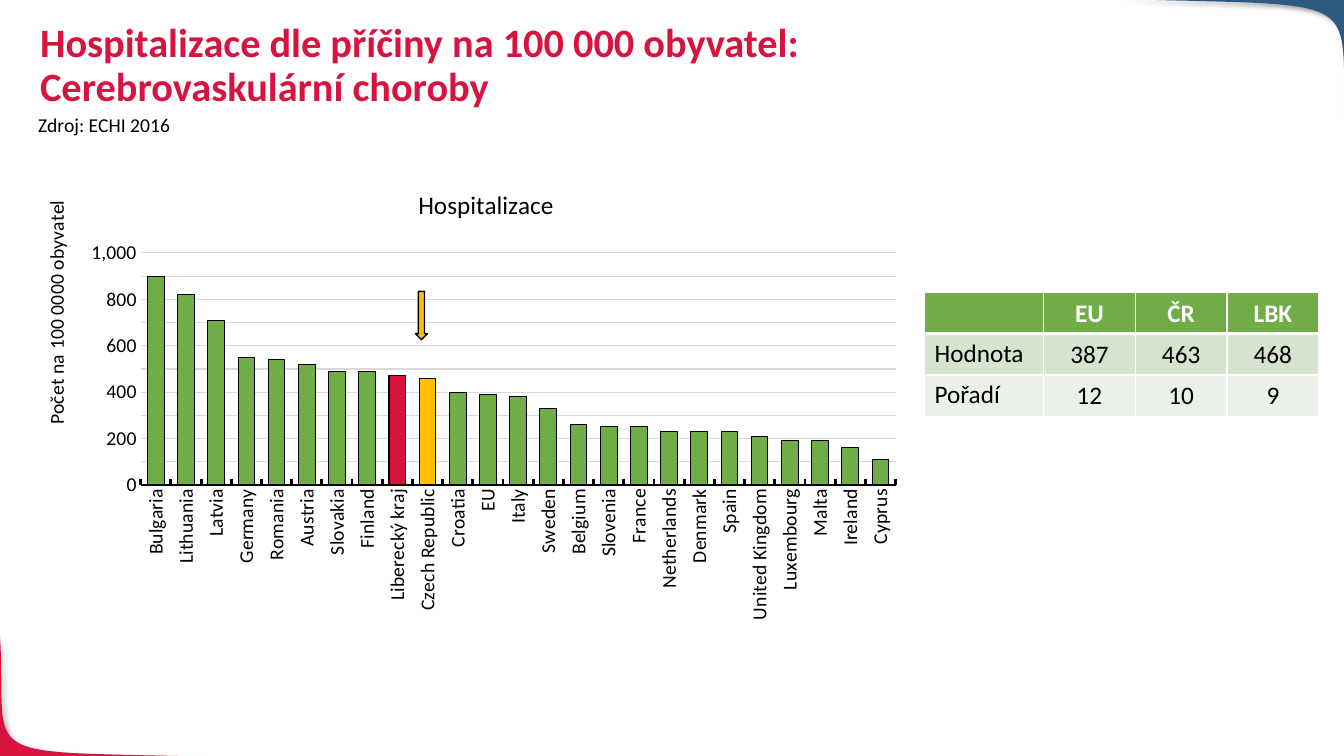
from copy import deepcopy
from lxml.etree import SubElement
from pptx import Presentation
from pptx.chart.data import CategoryChartData
from pptx.dml.color import RGBColor
from pptx.enum.chart import XL_CHART_TYPE, XL_TICK_MARK
from pptx.enum.shapes import MSO_SHAPE
from pptx.enum.text import MSO_ANCHOR, PP_ALIGN
from pptx.oxml import parse_xml
from pptx.oxml.ns import nsdecls, qn
from pptx.util import Inches, Pt

COLORS = {
    "red": "D71440", "blue": "2E5980", "green": "70AD47", "gold": "FFC000",
    "black": "000000", "white": "FFFFFF", "grid": "D9D9D9",
    "band": "D5E3CF", "pale": "EBF1E9",
}
RGB = {name: RGBColor.from_string(code) for name, code in COLORS.items()}


def style(font, size, color="black", bold=False):
    font.name, font.size, font.bold = "Calibri", Pt(size), bold
    font.color.rgb = RGB[color]


def place(node, index, **spots):
    """Give a chart part a fixed layout, in fractions of the chart."""
    for old in node.findall(qn("c:layout")):
        node.remove(old)
    target = '<c:layoutTarget val="inner"/>' if "w" in spots else ""
    modes = "".join(f'<c:{key}Mode val="edge"/>' for key in "xy")
    sizes = "".join(f'<c:{key} val="{val}"/>' for key, val in spots.items())
    node.insert(index, parse_xml(
        f'<c:layout {nsdecls("c")}><c:manualLayout>{target}{modes}{sizes}'
        '</c:manualLayout></c:layout>'))


deck = Presentation()
deck.slide_width, deck.slide_height = Inches(13.33), Inches(7.5)
slide = deck.slides.add_slide(deck.slide_layouts[6])
shapes = slide.shapes

# Curved corners: four Bezier points, then the page corner
corners = [
    ("red", [(2.13, 7.51), (-0.34, 7.44), (0.08, 7.59), (0, 6.3)], (-0.01, 7.51)),
    ("blue", [(11.11, -0.01), (13.7, 0.07), (13.26, -0.1), (13.35, 1.42)], (13.35, -0.01)),
]
STEPS = 40
for color, curve, tip in corners:
    points = []
    for step in range(STEPS + 1):
        t = step / STEPS
        parts = ((1 - t) ** 3, 3 * t * (1 - t) ** 2, 3 * t * t * (1 - t), t ** 3)
        points.append([Inches(sum(part * spot[axis] for part, spot in zip(parts, curve)))
                       for axis in (0, 1)])
    points.append([Inches(side) for side in tip])
    pen = shapes.build_freeform(*points[0])
    pen.add_line_segments(points[1:], close=True)
    corner = pen.convert_to_shape()
    corner.fill.solid()
    corner.fill.fore_color.rgb = RGB[color]
    corner.line.fill.background()
    corner.shadow.inherit = False
    glow = corner.element.spPr.find(qn("a:effectLst"))
    shade = SubElement(glow, qn("a:outerShdw"), blurRad=str(Pt(4)), dist=str(Pt(3)),
                       dir="2700000", algn="tl", rotWithShape="0")
    tint = SubElement(shade, qn("a:srgbClr"), val=COLORS["black"])
    SubElement(tint, qn("a:alpha"), val="40000")

# Heading and source
texts = [
    ("Zdroj: ECHI 2016", (0.28, 1.07, 1.52, 0.34), 14, "black", False),
    ("Hospitalizace dle příčiny na 100 000 obyvatel:\vCerebrovaskulární choroby",
     (0.3, 0.18, 11.43, 0.69), 28.8, "red", True),
]
for text, box, size, color, bold in texts:
    frame = shapes.add_textbox(*map(Inches, box)).text_frame
    frame.word_wrap = bold
    line = frame.paragraphs[0]
    line.text = text
    style(line.font, size, color, bold)
    if bold:
        line.line_spacing = 0.9

# Chart
rates = {
    "Bulgaria": 900, "Lithuania": 820, "Latvia": 710, "Germany": 550, "Romania": 540,
    "Austria": 520, "Slovakia": 490, "Finland": 490, "Liberecký kraj": 470,
    "Czech Republic": 460, "Croatia": 400, "EU": 390, "Italy": 380, "Sweden": 330,
    "Belgium": 260, "Slovenia": 250, "France": 250, "Netherlands": 230,
    "Denmark": 230, "Spain": 230, "United Kingdom": 210, "Luxembourg": 190,
    "Malta": 190, "Ireland": 160, "Cyprus": 110,
}
data = CategoryChartData()
data.categories = list(rates)
data.add_series("Hospitalizace", list(rates.values()))
chart = shapes.add_chart(XL_CHART_TYPE.COLUMN_CLUSTERED, Inches(0.21), Inches(1.68),
                         Inches(8.85), Inches(4.56), data).chart
style(chart.font, 10)
chart.has_legend = False

plot = chart.plots[0]
plot.gap_width, plot.overlap, plot.vary_by_categories = 81, -27, False
series = plot.series[0]
marks = {"Liberecký kraj": "red", "Czech Republic": "gold"}
looks = [(series.format, "green")]
looks += [(series.points[list(rates).index(name)].format, color)
          for name, color in marks.items()]
for look, color in looks:
    look.fill.solid()
    look.fill.fore_color.rgb = RGB[color]
    look.line.color.rgb = RGB["black"]
    look.line.width = Pt(0.75)

lands, scale = chart.category_axis, chart.value_axis
for axis in (lands, scale):
    style(axis.tick_labels.font, 14)
    axis.minor_tick_mark = XL_TICK_MARK.NONE
lands.major_tick_mark = XL_TICK_MARK.INSIDE
lands.format.line.color.rgb = RGB["black"]
lands.format.line.width = Pt(2)
lands._element.find(qn("c:txPr")).find(qn("a:bodyPr")).set("rot", "-5400000")

scale.major_tick_mark = XL_TICK_MARK.NONE
scale.format.line.fill.background()
scale.minimum_scale, scale.maximum_scale = 0, 1000
scale.major_unit, scale.minor_unit = 200, 100
scale.tick_labels.number_format = "#,##0"
scale.tick_labels.number_format_is_linked = False
scale.has_minor_gridlines = True
grid = scale.major_gridlines.format.line
grid.color.rgb = RGB["grid"]
grid.width = Pt(0.75)
major, minor = (scale._element.find(qn(f"c:{kind}Gridlines")) for kind in ("major", "minor"))
minor.append(deepcopy(major.find(qn("c:spPr"))))

titles = [
    (chart.chart_title, "Hospitalizace", 18, 0, 0.44, 0.03),
    (scale.axis_title, "Počet na 100 0000 obyvatel", 14, -5400000, 0.02, 0.06),
]
for title, text, size, turn, x, y in titles:
    line = title.text_frame.paragraphs[0]
    line.text = text
    style(line.font, size)
    title._element.find(".//" + qn("a:bodyPr")).set("rot", str(turn))
    place(title._element, 1, x=x, y=y)
place(lands._element.getparent(), 0, x=0.134, y=0.182, w=0.846, h=0.505)

# Arrow over the Czech bar
arrow = shapes.add_shape(MSO_SHAPE.DOWN_ARROW, Inches(4.12), Inches(2.89),
                         Inches(0.12), Inches(0.48))
arrow.shadow.inherit = False
arrow.fill.solid()
arrow.fill.fore_color.rgb = RGB["gold"]
arrow.line.color.rgb = RGB["black"]
arrow.line.width = Pt(1)

# Table
rows = [["", "EU", "ČR", "LBK"], ["Hodnota", "387", "463", "468"],
        ["Pořadí", "12", "10", "9"]]
table = shapes.add_table(3, 4, Inches(9.17), Inches(2.9), Inches(3.91), Inches(1.23)).table
for col, width in zip(table.columns, (1.18, 0.91, 0.91, 0.91)):
    col.width = Inches(width)
for r, (row, fill) in enumerate(zip(rows, ("green", "band", "pale"))):
    table.rows[r].height = Inches(0.41)
    for c, text in enumerate(row):
        cell = table.cell(r, c)
        line = cell.text_frame.paragraphs[0]
        line.text = text
        style(line.font, 18, "black" if r else "white", r == 0)
        if c:
            line.alignment = PP_ALIGN.CENTER
            cell.vertical_anchor = MSO_ANCHOR.MIDDLE
            cell.margin_left = cell.margin_right = cell.margin_top = Inches(0.01)
            cell.margin_bottom = 0
        props = cell._tc.get_or_add_tcPr()
        for side in "LRTB":
            thick = 3 if (r, side) in ((0, "B"), (1, "T")) else 1
            edge = SubElement(props, qn(f"a:ln{side}"), w=str(Pt(thick)))
            paint = SubElement(edge, qn("a:solidFill"))
            SubElement(paint, qn("a:srgbClr"), val=COLORS["white"])
        cell.fill.solid()
        cell.fill.fore_color.rgb = RGB[fill]

deck.save("out.pptx")
